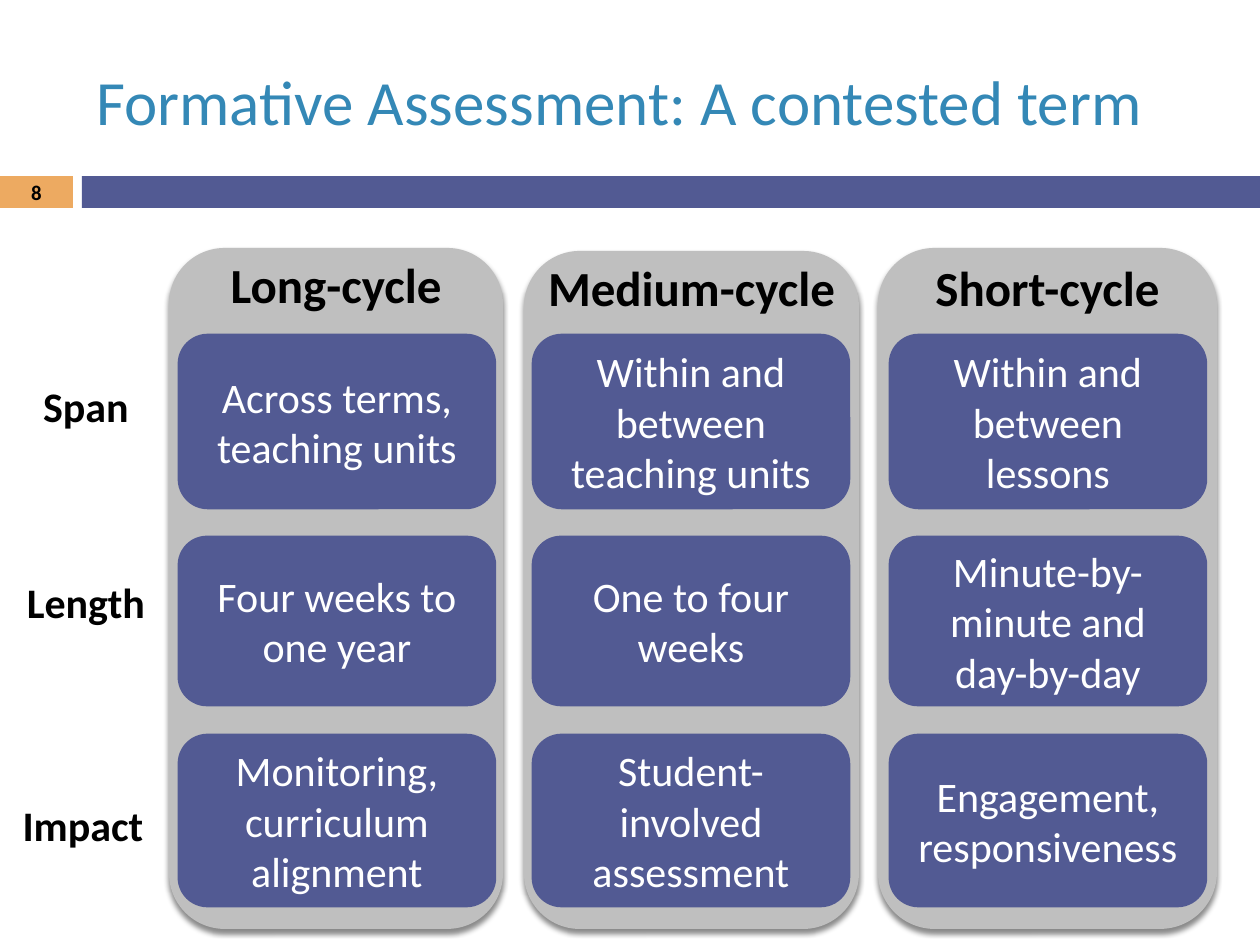
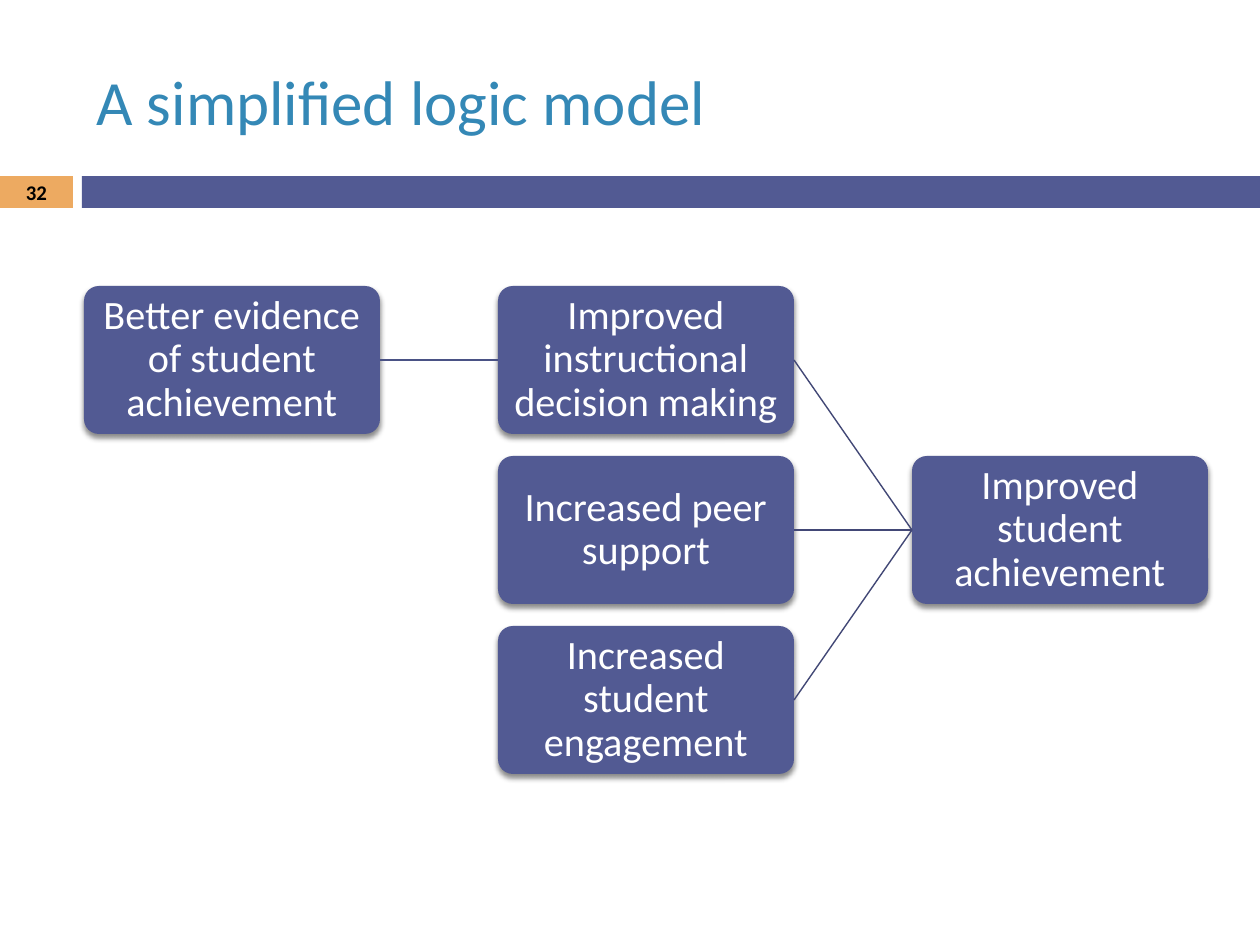
import pptx
import pptx.util
import pptx.dml.color
import pptx.enum.shapes
import pptx.enum.text
import pptx.oxml
import pptx.oxml.ns
import lxml.etree

PX = 914400 / 126
FONT = "Calibri"
COLORS = {
    "title": "3488B6",
    "indigo": "525A93",
    "orange": "EDAA61",
    "grey": "BFBFBF",
    "link": "4A5285",
    "dark_link": "424876",
    "black": "000000",
    "white": "FFFFFF",
}
RGB = {name: pptx.dml.color.RGBColor.from_string(c) for name, c in COLORS.items()}
SHADOW = (
    f'<a:outerShdw {pptx.oxml.ns.nsdecls("a")} blurRad="38100" dist="30000" dir="5400000" rotWithShape="0">'
    f'<a:srgbClr val="{COLORS["black"]}"><a:alpha val="45000"/></a:srgbClr></a:outerShdw>'
)
RECT = pptx.enum.shapes.MSO_SHAPE.RECTANGLE
ROUND = pptx.enum.shapes.MSO_SHAPE.ROUNDED_RECTANGLE
ALIGN = pptx.enum.text.PP_ALIGN
ANCHOR = pptx.enum.text.MSO_ANCHOR


def add_box(s, x, y, w, h, kind=None, fill=None, line=None, shadow=False, adj=None):
    area = [round(v * PX) for v in (x, y, w, h)]
    if kind is None:
        return s.shapes.add_textbox(*area)
    sp = s.shapes.add_shape(kind, *area)
    sp.fill.solid()
    sp.fill.fore_color.rgb = RGB[fill]
    if line:
        sp.line.color.rgb = RGB[line]
        sp.line.width = pptx.util.Pt(1.5)
    else:
        sp.line.fill.background()
    sp.shadow.inherit = False
    if shadow:
        effects = sp._element.spPr.find(pptx.oxml.ns.qn("a:effectLst"))
        effects.append(pptx.oxml.parse_xml(SHADOW))
    if adj is not None:
        sp.adjustments[0] = adj
    return sp


def add_text(sp, text, size=24, color="white", bold=False, align=ALIGN.CENTER,
             anchor=ANCHOR.MIDDLE, inset=None, spacing=None):
    tf = sp.text_frame
    tf.word_wrap = True
    tf.vertical_anchor = anchor
    if inset is not None:
        tf.margin_left = tf.margin_right = tf.margin_top = tf.margin_bottom = round(inset * PX)
    tf.text = text
    for p in tf.paragraphs:
        p.alignment = align
        p.line_spacing = spacing
        for r in p.runs:
            r.font.name = FONT
            r.font.size = pptx.util.Pt(size)
            r.font.bold = bold
            r.font.color.rgb = RGB[color]


prs = pptx.Presentation()
prs.slide_width = round(1260 * PX)
prs.slide_height = round(945 * PX)

slides = []
for title, number in [("Formative Assessment: A contested term", "8"),
                      ("A simplified logic model", "32")]:
    s = prs.slides.add_slide(prs.slide_layouts[6])
    add_box(s, 0, 176, 73, 32, RECT, "orange")
    add_box(s, 82, 176, 1178, 32, RECT, "indigo")
    add_text(add_box(s, 84, 32, 1124, 136), title, size=36, color="title", align=ALIGN.LEFT)
    add_text(add_box(s, 0, 175, 73, 34), number, size=11.9, color="black", bold=True)
    slides.append(s)

s = slides[0]
for label, x, y in [("Span", 3, 374), ("Length", 3, 570), ("Impact", 0, 793)]:
    add_text(add_box(s, x, y, 166, 63), label, color="black", bold=True, anchor=ANCHOR.TOP)

rows = [(335, 173), (537, 168), (735, 171)]
cycles = [
    ("Long-cycle", 169, 334, 248, 248, 179,
     ["Across terms, teaching units", "Four weeks to\none year",
      "Monitoring, curriculum alignment"]),
    ("Medium-cycle", 524, 335, 251, 251, 533,
     ["Within and between teaching units", "One to four weeks",
      "Student-involved assessment"]),
    ("Short-cycle", 878, 339, 248, 251, 890,
     ["Within and between lessons", "Minute-by-minute and day-by-day",
      "Engagement, responsiveness"]),
]
for name, x, w, top, name_top, cell_x, cells in cycles:
    add_box(s, x, top, w, 929 - top, ROUND, "grey", shadow=True)
    add_text(add_box(s, x, name_top, w, 72), name, size=28, color="black", bold=True,
             anchor=ANCHOR.TOP)
    for (y, h), cell in zip(rows, cells):
        add_text(add_box(s, cell_x, y, 316, h, ROUND, "indigo", line="indigo"), cell)

s = slides[1]
nodes = {}
for key, col, row, text in [
    ("evidence", 0, 0, "Better evidence of student achievement"),
    ("decisions", 1, 0, "Improved instructional decision making"),
    ("peers", 1, 1, "Increased peer support"),
    ("engagement", 1, 2, "Increased student engagement"),
    ("achievement", 2, 1, "Improved student achievement"),
]:
    sp = add_box(s, 84 + 414 * col, 286 + 170 * row, 296, 148, ROUND, "indigo",
                 shadow=True, adj=0.1)
    add_text(sp, text, size=23, inset=3, spacing=0.9)
    nodes[key] = sp

for start, end, color in [
    ("evidence", "decisions", "link"),
    ("decisions", "achievement", "dark_link"),
    ("peers", "achievement", "dark_link"),
    ("engagement", "achievement", "dark_link"),
]:
    cx = s.shapes.add_connector(pptx.enum.shapes.MSO_CONNECTOR.STRAIGHT, 0, 0, 0, 0)
    cx.begin_connect(nodes[start], 3)
    cx.end_connect(nodes[end], 1)
    cx.line.color.rgb = RGB[color]
    cx.line.width = pptx.util.Pt(0.79)
    lxml.etree.SubElement(cx._element.spPr, pptx.oxml.ns.qn("a:effectLst"))

prs.save("out.pptx")
